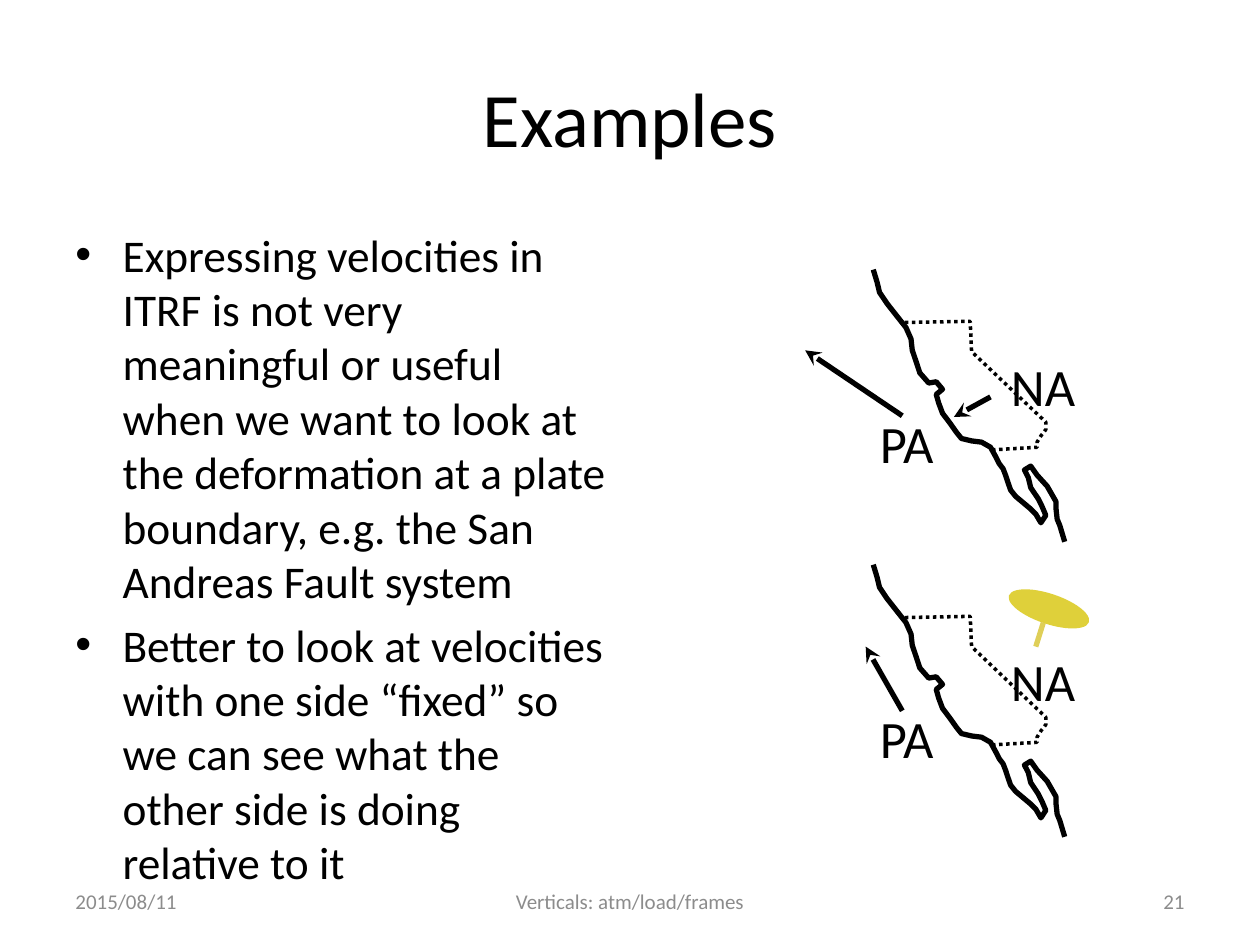
from lxml.etree import SubElement
from pptx import Presentation
from pptx.dml.color import RGBColor
from pptx.enum.dml import MSO_LINE
from pptx.enum.shapes import MSO_CONNECTOR, MSO_SHAPE
from pptx.enum.text import MSO_ANCHOR, MSO_AUTO_SIZE, PP_ALIGN
from pptx.oxml.ns import qn
from pptx.util import Pt

BLACK = RGBColor(0x00, 0x00, 0x00)
GRAY = RGBColor(0x8C, 0x8C, 0x8C)
PIN_YELLOW = RGBColor(0xDF, 0xD0, 0x3A)
SHAFT_YELLOW = RGBColor(0xDF, 0xCF, 0x58)
FONT = "Calibri"

COAST = [
    (0, 0), (2.2, 7.2), (3.6, 13), (7.9, 19.4), (13, 25.9), (18.7, 33.1),
    (21.6, 39.6), (22.3, 46.1), (24.5, 52.6), (26.6, 59), (31.7, 64.8),
    (36, 64.1), (39.6, 68.4), (36, 71.3), (37.4, 76.3), (39.6, 82.1),
    (43.9, 87.8), (47.5, 92.9), (50.4, 96.5), (56.2, 97.9), (61.9, 98.6),
    (67, 101.5), (69.8, 106.6), (72, 110.9), (74.2, 113.8), (75.6, 117.4),
    (77, 121.7), (78.5, 126), (81.4, 129.6), (85.7, 133.2), (90, 136.8),
    (92.9, 139.7), (95.8, 144.7), (98.6, 140.4), (96.5, 135.4), (94.3, 131),
    (90, 124.6), (88.6, 118.8), (86.4, 114.5), (90, 112.3), (93.6, 117.4),
    (99.4, 123.8), (104.4, 132.5), (104.4, 136.1), (105.1, 142.6),
    (106.6, 146.2), (109.4, 155.5),
]
STATE_BORDER = [
    (18, 30.2), (55.4, 29.5), (56.2, 46.8), (98.6, 87.1), (98.6, 91.4),
    (95.8, 95), (93.6, 98.6), (93.6, 101.5), (67, 103),
]
PACIFIC_BASE = (16.6, 83.5)
ITRF_VELOCITIES = [((-38.9, 46.1), PACIFIC_BASE), ((46.1, 84.2), (67, 72.7))]
FIXED_VELOCITIES = [((-4.3, 46.8), PACIFIC_BASE)]


def add_text(slide, box, lines, size, color=BLACK, align=PP_ALIGN.LEFT,
             anchor=MSO_ANCHOR.MIDDLE):
    left, top, width, height = box
    textbox = slide.shapes.add_textbox(Pt(left), Pt(top), Pt(width), Pt(height))
    frame = textbox.text_frame
    frame.word_wrap = True
    frame.vertical_anchor = anchor
    frame.text = "\n".join(lines)
    for paragraph in frame.paragraphs:
        paragraph.alignment = align
        paragraph.font.name = FONT
        paragraph.font.size = Pt(size)
        paragraph.font.color.rgb = color
    return frame


def add_bullets(slide, box, lines):
    frame = add_text(slide, box, lines, 25.9, anchor=MSO_ANCHOR.TOP)
    for paragraph in frame.paragraphs:
        paragraph.space_before = Pt(5.2)
        properties = paragraph._p.get_or_add_pPr()
        properties.set("marL", str(Pt(27)))
        properties.set("indent", str(Pt(-27)))
        bullet_font = SubElement(properties, qn("a:buFont"))
        bullet_font.set("typeface", "Arial")
        SubElement(properties, qn("a:buChar")).set("char", "•")
        default_run = properties.find(qn("a:defRPr"))
        properties.append(default_run)


def add_outline(slide, left, top, points, width, dash=None):
    vertices = [(Pt(left + x), Pt(top + y)) for x, y in points]
    builder = slide.shapes.build_freeform(*vertices[0])
    builder.add_line_segments(vertices[1:], close=False)
    outline = builder.convert_to_shape()
    outline.shadow.inherit = False
    outline.fill.background()
    outline.line.color.rgb = BLACK
    outline.line.width = Pt(width)
    if dash is not None:
        outline.line.dash_style = dash


def add_line(slide, left, top, start, end, color=BLACK, arrow=False):
    line = slide.shapes.add_connector(
        MSO_CONNECTOR.STRAIGHT, Pt(left + start[0]), Pt(top + start[1]),
        Pt(left + end[0]), Pt(top + end[1]))
    line.line.color.rgb = color
    line.line.width = Pt(3)
    properties = line._element.spPr
    if arrow:
        head = SubElement(properties.get_or_add_ln(), qn("a:headEnd"))
        head.set("type", "stealth")
    SubElement(properties, qn("a:effectLst"))


def add_plate_label(slide, box, plate):
    frame = add_text(slide, box, [plate], 30)
    frame.word_wrap = False
    frame.auto_size = MSO_AUTO_SIZE.SHAPE_TO_FIT_TEXT
    frame.margin_left = frame.margin_right = Pt(4.5)
    frame.margin_top = frame.margin_bottom = Pt(4.5)


def add_plate_map(slide, left, top, velocities):
    add_outline(slide, left, top, COAST, 3)
    add_outline(slide, left, top, STATE_BORDER, 2, MSO_LINE.ROUND_DOT)
    for tip, base in velocities:
        add_line(slide, left, top, tip, base, arrow=True)
    add_plate_label(slide, (left - 0.7, top + 76.3, 41, 44.6), "PA")
    add_plate_label(slide, (left + 74.2, top + 43.9, 47, 44.6), "NA")


def add_pin(slide, left, top):
    pin_head = slide.shapes.add_shape(
        MSO_SHAPE.OVAL, Pt(left), Pt(top), Pt(48.2), Pt(17.3))
    pin_head.rotation = 18.4
    pin_head.shadow.inherit = False
    pin_head.fill.solid()
    pin_head.fill.fore_color.rgb = PIN_YELLOW
    pin_head.line.fill.background()
    add_line(slide, left, top, (20.9, 16.5), (16.6, 30.2), SHAFT_YELLOW)


def add_footer(slide, left, top):
    for offset, width, text, align in (
            (0, 168, "2015/08/11", PP_ALIGN.LEFT),
            (210, 228, "Verticals: atm/load/frames", PP_ALIGN.CENTER),
            (480, 168, "21", PP_ALIGN.RIGHT)):
        add_text(slide, (left + offset, top, width, 28.8), [text], 12, GRAY, align)


def main():
    presentation = Presentation()
    presentation.slide_width = Pt(720)
    presentation.slide_height = Pt(540)
    slide = presentation.slides.add_slide(presentation.slide_layouts[6])
    add_text(slide, (36, 21.6, 648, 90), ["Examples"], 44, align=PP_ALIGN.CENTER)
    add_bullets(slide, (36, 126, 318, 356.4), [
        "Expressing velocities in ITRF is not very meaningful or useful when we "
        "want to look at the deformation at a plate boundary, e.g. the San "
        "Andreas Fault system",
        "Better to look at velocities with one side “fixed” so we can see what "
        "the other side is doing relative to it",
    ])
    map_left, itrf_top, fixed_top = 499, 154.1, 322.7
    add_plate_map(slide, map_left, itrf_top, ITRF_VELOCITIES)
    add_plate_map(slide, map_left, fixed_top, FIXED_VELOCITIES)
    add_pin(slide, map_left + 76.3, fixed_top + 16.6)
    add_footer(slide, 36, 500.4)
    presentation.save("out.pptx")


if __name__ == "__main__":
    main()
